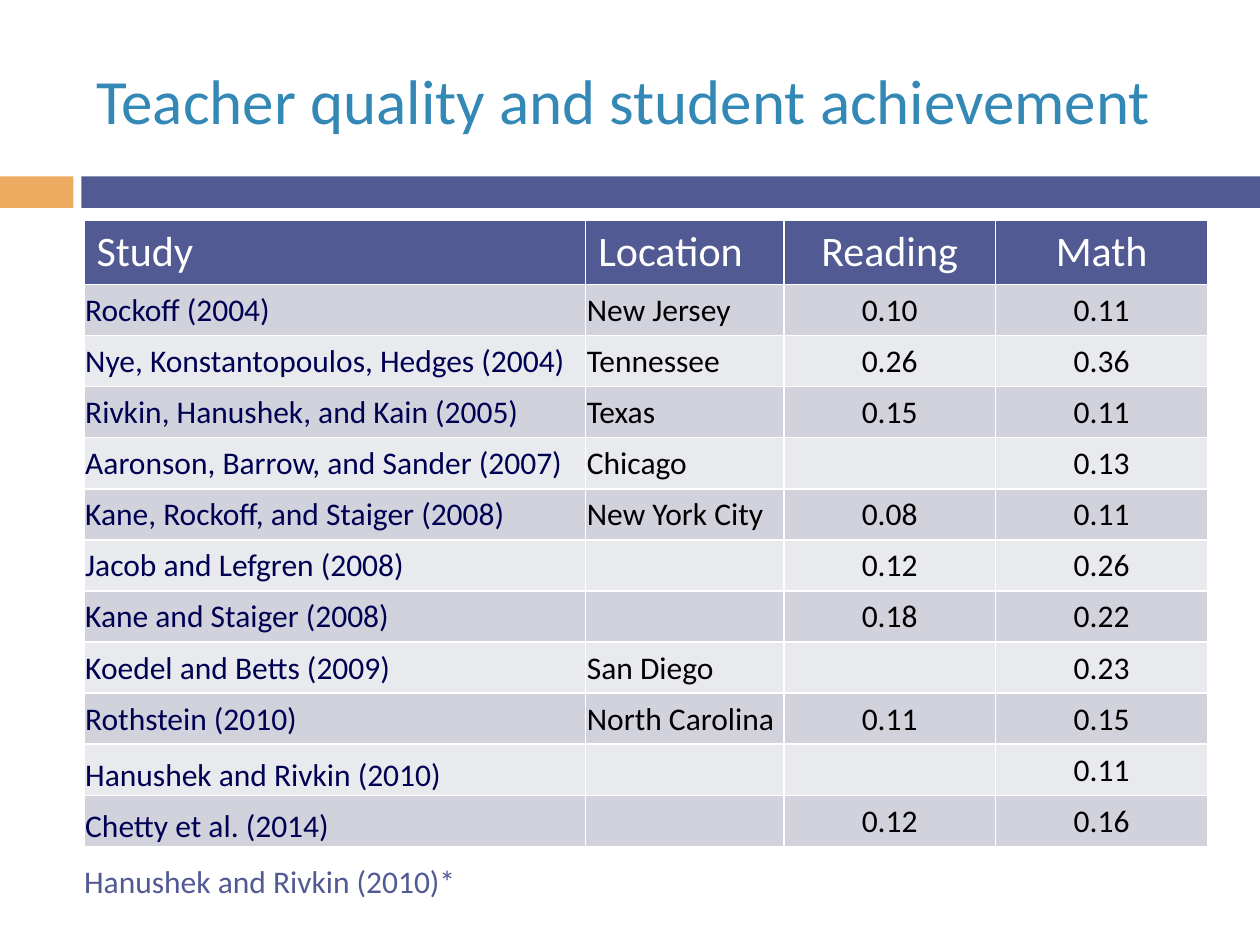
from pptx import Presentation
from pptx.dml.color import RGBColor
from pptx.enum.shapes import MSO_SHAPE
from pptx.enum.text import MSO_ANCHOR, MSO_AUTO_SIZE, PP_ALIGN
from pptx.util import Pt

RECTANGLE = MSO_SHAPE.RECTANGLE
LEFT, CENTER = PP_ALIGN.LEFT, PP_ALIGN.CENTER
TOP, MIDDLE, BOTTOM = MSO_ANCHOR.TOP, MSO_ANCHOR.MIDDLE, MSO_ANCHOR.BOTTOM
GROW = MSO_AUTO_SIZE.SHAPE_TO_FIT_TEXT
NO_FIT = MSO_AUTO_SIZE.NONE

FONT = "Calibri"
TITLE_ONLY = 5
COLORS = {
    "title": "3488B6",
    "accent": "EDAA61",
    "band": "525A93",
    "header": "FFFFFF",
    "study": "000053",
    "value": "000000",
    "odd": "D1D2DC",
    "even": "E9EAEE",
}
COLUMN_WIDTHS = (286.7, 113.2, 121.1, 121.1)
COLUMN_ALIGNMENTS = (LEFT, LEFT, CENTER, CENTER)
ROW_HEIGHT = 29.22
CELL_INSET = 0.72
BOTTOM_ROWS = 2
HEADERS = ("Study", "Location", "Reading", "Math")
STUDIES = (
    ("Rockoff (2004)", "New Jersey", "0.10", "0.11"),
    ("Nye, Konstantopoulos, Hedges (2004)", "Tennessee", "0.26", "0.36"),
    ("Rivkin, Hanushek, and Kain (2005)", "Texas", "0.15", "0.11"),
    ("Aaronson, Barrow, and Sander (2007)", "Chicago", "", "0.13"),
    ("Kane, Rockoff, and Staiger (2008)", "New York City", "0.08", "0.11"),
    ("Jacob and Lefgren (2008)", "", "0.12", "0.26"),
    ("Kane and Staiger (2008)", "", "0.18", "0.22"),
    ("Koedel and Betts (2009)", "San Diego", "", "0.23"),
    ("Rothstein (2010)", "North Carolina", "0.11", "0.15"),
    ("Hanushek and Rivkin (2010)", "", "", "0.11"),
    ("Chetty et al. (2014)", "", "0.12", "0.16"),
)


def color(name):
    return RGBColor.from_string(COLORS[name])


def add_span(para, text, size, color_name):
    span = para.add_run()
    span.text = text
    span.font.name = FONT
    span.font.size = Pt(size)
    span.font.bold = False
    span.font.color.rgb = color(color_name)


def add_bar(page, left, width, color_name):
    bar = page.shapes.add_shape(RECTANGLE, Pt(left), Pt(100.8), Pt(width), Pt(18))
    bar.shadow.inherit = False
    bar.fill.solid()
    bar.fill.fore_color.rgb = color(color_name)
    bar.line.fill.background()


def set_title(page, text):
    title = page.shapes.title
    title.left, title.top = Pt(48), Pt(18)
    title.width, title.height = Pt(642), Pt(78)
    frame = title.text_frame
    frame.auto_size = NO_FIT
    frame.vertical_anchor = MIDDLE
    para = frame.paragraphs[0]
    para.alignment = LEFT
    add_span(para, text, 36, "title")


def fill_cell(cell, text, size, color_name, fill_name, alignment, anchor):
    cell.fill.solid()
    cell.fill.fore_color.rgb = color(fill_name)
    cell.vertical_anchor = anchor
    para = cell.text_frame.paragraphs[0]
    para.alignment = alignment
    if text:
        add_span(para, text, size, color_name)


def tighten(cell):
    cell.margin_left = cell.margin_right = cell.margin_top = Pt(CELL_INSET)
    cell.margin_bottom = Pt(0)


def add_study_table(page):
    row_count = len(STUDIES) + 1
    table = page.shapes.add_table(
        row_count, len(HEADERS), Pt(48), Pt(126),
        Pt(sum(COLUMN_WIDTHS)), Pt(ROW_HEIGHT * row_count),
    ).table
    for column, width in zip(table.columns, COLUMN_WIDTHS):
        column.width = Pt(width)
    for row in table.rows:
        row.height = Pt(ROW_HEIGHT)
    for index, (text, alignment) in enumerate(zip(HEADERS, COLUMN_ALIGNMENTS)):
        fill_cell(table.cell(0, index), text, 24, "header", "band", alignment, TOP)
    for number, study in enumerate(STUDIES, 1):
        fill_name = "odd" if number % 2 else "even"
        for index, (text, alignment) in enumerate(zip(study, COLUMN_ALIGNMENTS)):
            cell = table.cell(number, index)
            low = index == 0 and number > len(STUDIES) - BOTTOM_ROWS
            color_name = "value" if index else "study"
            anchor = BOTTOM if low else MIDDLE
            tighten(cell)
            fill_cell(cell, text, 18, color_name, fill_name, alignment, anchor)


def add_source_note(page, text):
    box = page.shapes.add_textbox(Pt(41), Pt(489), Pt(250), Pt(29))
    frame = box.text_frame
    frame.word_wrap = True
    frame.auto_size = GROW
    add_span(frame.paragraphs[0], text, 18, "band")


def main():
    deck = Presentation()
    deck.slide_width, deck.slide_height = Pt(720), Pt(540)
    page = deck.slides.add_slide(deck.slide_layouts[TITLE_ONLY])
    add_bar(page, 0, 42, "accent")
    add_bar(page, 46.5, 673.5, "band")
    set_title(page, "Teacher quality and student achievement")
    add_study_table(page)
    add_source_note(page, "Hanushek and Rivkin (2010)*")
    deck.save("out.pptx")


if __name__ == "__main__":
    main()
